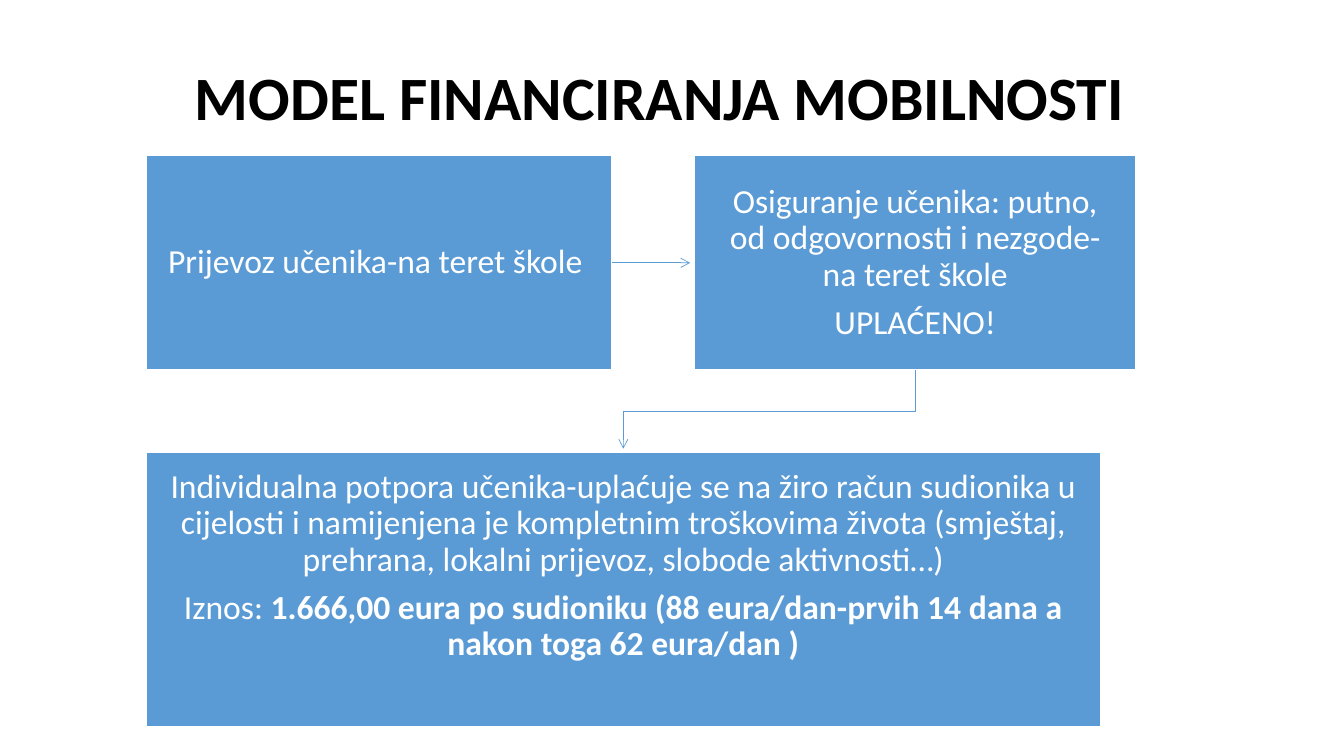
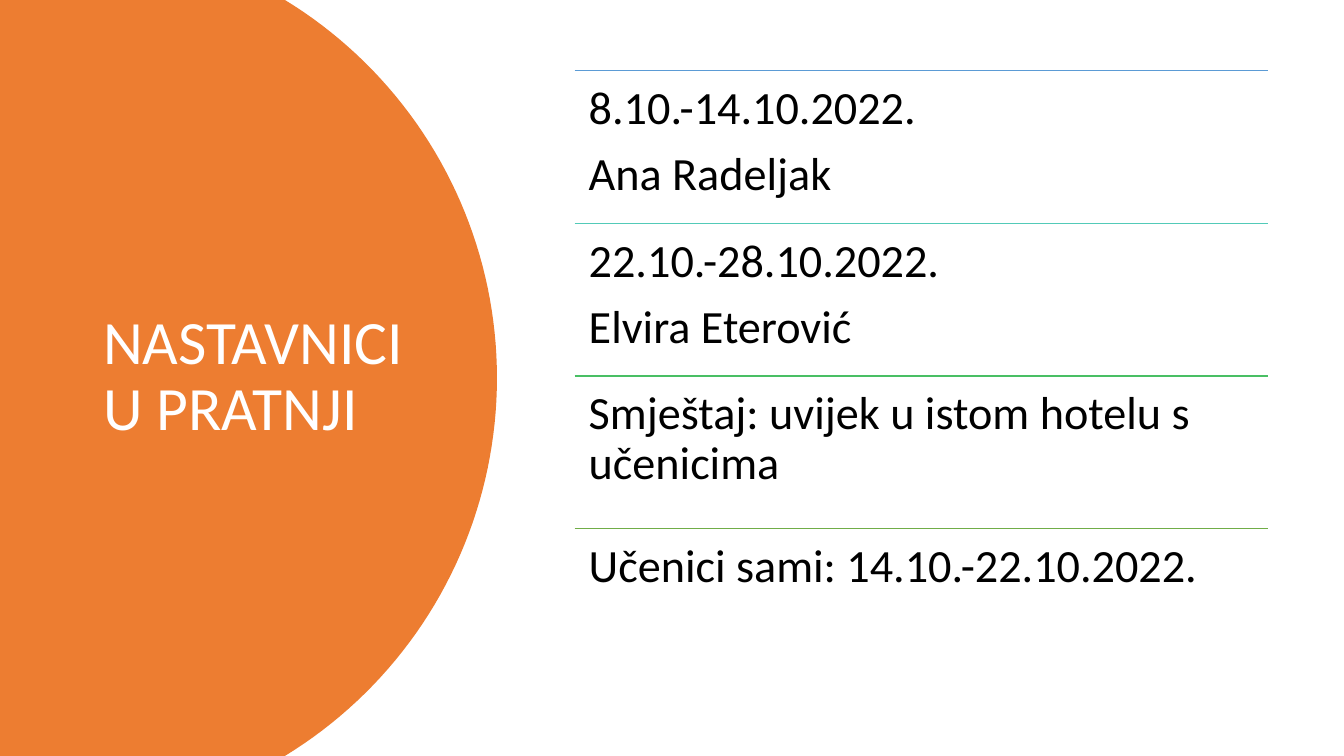
"""Build two slides: a mobility funding flow and the list of accompanying teachers."""
import math

from lxml import etree
from pptx import Presentation, util as u
from pptx.dml import color
from pptx.enum import shapes, text
from pptx.oxml import ns

W, H = 960, 540
FONT = "Calibri"
C = {"blue": "5B9BD5", "orange": "ED7D31", "white": "FFFFFF", "black": "000000",
     "teal": "52CAB8", "green": "49BF64", "olive": "70AD47"}
LEFT, CENTER = text.PP_ALIGN.LEFT, text.PP_ALIGN.CENTER
TOP, MIDDLE = text.MSO_ANCHOR.TOP, text.MSO_ANCHOR.MIDDLE
TITLE = {"size": 44, "align": LEFT, "anchor": MIDDLE, "inset": (7.2, 3.6), "after": 0}
BOX = {"size": 24, "color": "white", "align": CENTER, "inset": (12.25, 13), "after": 8.4}
ROW = {"size": 33, "color": "black", "align": LEFT, "anchor": TOP,
       "inset": (10, 10), "after": 11.55}


def rgb(name):
    """Return the named colour."""
    return color.RGBColor.from_string(C[name])


def apply(obj, values):
    """Set attributes of an object from a dict."""
    for key, value in values.items():
        setattr(obj, key, value)


def write(tf, paragraphs, fmt):
    """Fill a text frame; each paragraph is a list of (text, bold) runs."""
    dx, dy = (u.Pt(v) for v in fmt["inset"])
    apply(tf, {"word_wrap": True, "auto_size": text.MSO_AUTO_SIZE.NONE,
               "vertical_anchor": fmt["anchor"], "margin_left": dx, "margin_right": dx,
               "margin_top": dy, "margin_bottom": dy})
    for i, runs in enumerate(paragraphs):
        p = tf.add_paragraph() if i else tf.paragraphs[0]
        apply(p, {"alignment": fmt["align"], "line_spacing": 0.9,
                  "space_before": u.Pt(0), "space_after": u.Pt(fmt["after"])})
        for words, bold in runs:
            r = p.add_run()
            r.text = words
            apply(r.font, {"name": FONT, "size": u.Pt(fmt["size"]), "bold": bold})
            r.font.color.rgb = rgb(fmt["color"])


def stroke(sp, name, width, arrow=False):
    """Give a shape or connector a plain line, with an optional arrowhead at its end."""
    sp.line.color.rgb = rgb(name)
    sp.line.width = u.Pt(width)
    if arrow:
        ln = sp.line._get_or_add_ln()
        etree.SubElement(ln, ns.qn("a:tailEnd"), type="arrow")


def title(s, box, words, name, bold):
    """Move and format the title placeholder."""
    sp = s.shapes.title
    apply(sp, dict(zip(("left", "top", "width", "height"), map(u.Pt, box))))
    write(sp.text_frame, [[(words, bold)]], {**TITLE, "color": name})


def outline(s, points, close):
    """Draw a polygon or an open path through points."""
    pts = [(u.Pt(x), u.Pt(y)) for x, y in points]
    fb = s.shapes.build_freeform(*pts[0])
    fb.add_line_segments(pts[1:], close=close)
    sp = fb.convert_to_shape()
    sp.shadow.inherit = False
    return sp


def line(s, start, end, name, width, arrow=False):
    """Draw a straight line between two points."""
    sp = s.shapes.add_connector(shapes.MSO_CONNECTOR.STRAIGHT, *map(u.Pt, (*start, *end)))
    stroke(sp, name, width, arrow)
    etree.SubElement(sp._element.spPr, ns.qn("a:effectLst"))


def step(s, box, paragraphs, anchor):
    """Draw one filled step of the flow."""
    sp = s.shapes.add_shape(shapes.MSO_SHAPE.RECTANGLE, *map(u.Pt, box))
    sp.shadow.inherit = False
    sp.fill.solid()
    sp.fill.fore_color.rgb = rgb("blue")
    stroke(sp, "white", 1.5)
    write(sp.text_frame, paragraphs, {**BOX, "anchor": anchor})


def flow(s, x, y, steps):
    """Place two steps side by side and a third below, joined by arrows."""
    w1, w2, w3, h1, h3, gap_x, gap_y = 333.5, 315.5, 682.5, 153.5, 197, 58.5, 58
    x2, y2 = x + w1 + gap_x, y + h1 + gap_y
    boxes = [(x, y, w1, h1), (x2, y, w2, h1), (x, y2, w3, h3)]
    for box, paragraphs, anchor in zip(boxes, steps, (MIDDLE, MIDDLE, TOP)):
        step(s, box, paragraphs, anchor)
    line(s, (x + w1, y + h1 / 2), (x2 - 3, y + h1 / 2), "blue", 0.5, True)
    from_x, to_x, bend = x2 + w2 / 2, x + w3 / 2, y + h1 + gap_y / 2
    elbow = outline(s, [(from_x, y + h1), (from_x, bend), (to_x, bend), (to_x, y2 - 2)], False)
    elbow.fill.background()
    stroke(elbow, "blue", 0.5, True)


def side_panel(s, width, edge, steps=80):
    """Draw the left panel, whose right side is an arc, behind the title."""
    depth, half = width - edge, H / 2
    radius = (depth ** 2 + half ** 2) / (2 * depth)
    sweep = math.asin(half / radius)
    angles = [sweep * (2 * i / steps - 1) for i in range(steps + 1)]
    arc = [(width - radius + radius * math.cos(a), half + radius * math.sin(a)) for a in angles]
    sp = outline(s, [(0, 0), *arc, (0, H)], True)
    sp.fill.solid()
    sp.fill.fore_color.rgb = rgb("orange")
    sp.line.fill.background()
    s.shapes.title._element.addprevious(sp._element)


def ruled_list(s, box, rows):
    """Stack equal rows in a box, each under a coloured rule."""
    x, y, w, h = box
    pitch = h / len(rows)
    for i, (name, paragraphs) in enumerate(rows):
        top = y + i * pitch
        line(s, (x, top), (x + w, top), name, 1)
        sp = s.shapes.add_textbox(*map(u.Pt, (x, top, w, pitch)))
        write(sp.text_frame, [[(words, False)] for words in paragraphs], ROW)


def funding_slide(s):
    """Build the funding model slide."""
    title(s, (132, 19.5, 828, 104.5), "MODEL FINANCIRANJA MOBILNOSTI", "black", True)
    flow(s, 104, 111, [
        [[("Prijevoz učenika-na teret škole ", False)]],
        [[("Osiguranje učenika: putno, od odgovornosti i nezgode- na teret škole", False)],
         [("UPLAĆENO!", False)]],
        [[("Individualna potpora učenika-uplaćuje se na žiro račun sudionika u cijelosti i "
           "namijenjena je kompletnim troškovima života (smještaj, prehrana, lokalni "
           "prijevoz, slobode aktivnosti…)", False)],
         [("Iznos: ", False),
          ("1.666,00 eura po sudioniku (88 eura/dan-prvih 14 dana a nakon toga "
           "62 eura/dan )", True)]],
    ])


def teachers_slide(s):
    """Build the accompanying teachers slide."""
    side_panel(s, 355, 203.5)
    title(s, (66.5, 50.5, 232.5, 438.5), "NASTAVNICI U PRATNJI", "white", False)
    ruled_list(s, (410.5, 50.5, 495, 436), [
        ("blue", ["8.10.-14.10.2022.", "Ana Radeljak"]),
        ("teal", ["22.10.-28.10.2022.", "Elvira Eterović"]),
        ("green", ["Smještaj: uvijek u istom hotelu s učenicima"]),
        ("olive", ["Učenici sami: 14.10.-22.10.2022."]),
    ])


def main():
    """Build and save the presentation."""
    prs = Presentation()
    apply(prs, {"slide_width": u.Pt(W), "slide_height": u.Pt(H)})
    for build in (funding_slide, teachers_slide):
        build(prs.slides.add_slide(prs.slide_layouts[5]))
    prs.save("out.pptx")


if __name__ == "__main__":
    main()
